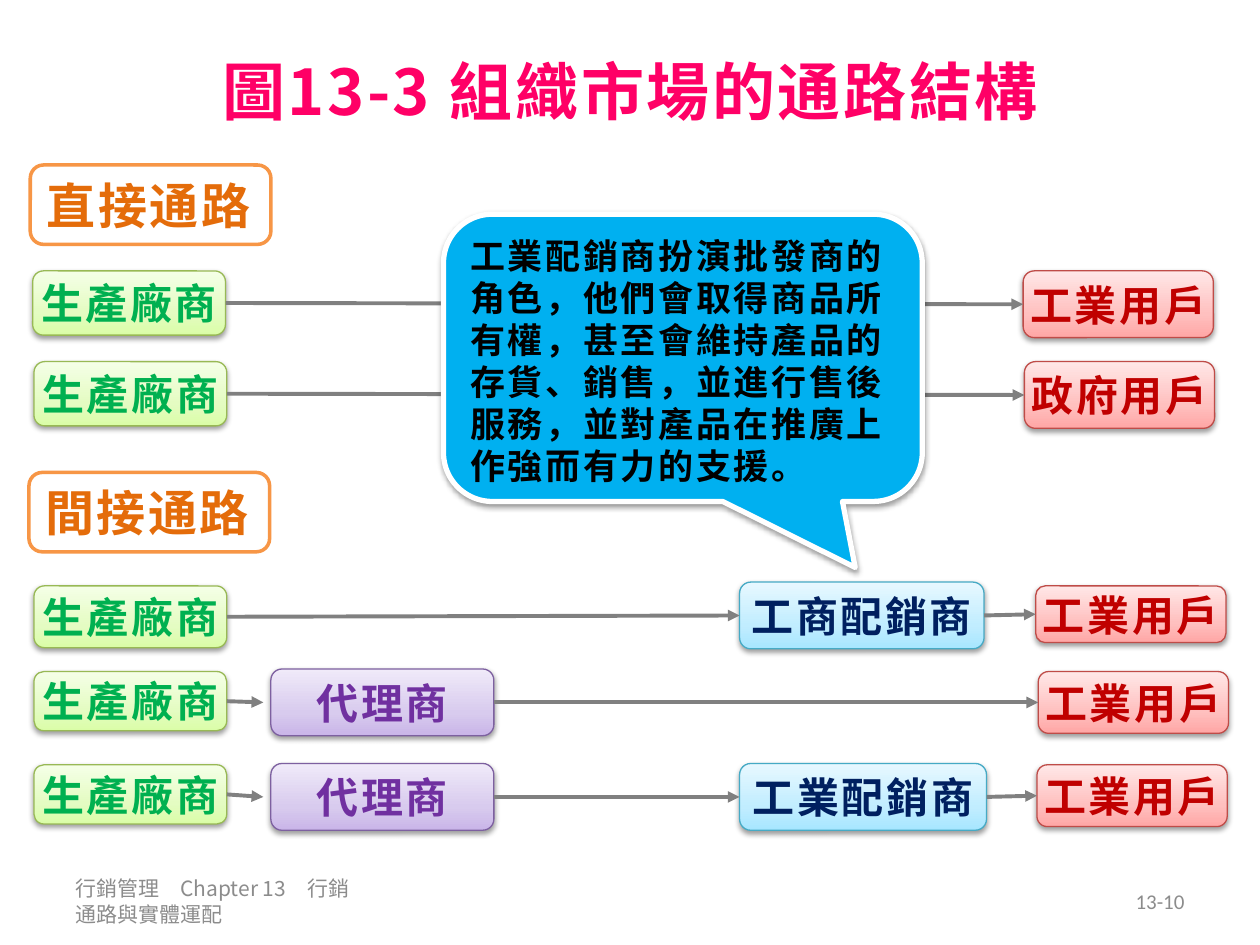
"""Build the slide on channel structures in organisational markets."""
from lxml import etree
from pptx import Presentation
from pptx import util as u
from pptx.dml.color import RGBColor
from pptx.enum import shapes, text
from pptx.oxml import parse_xml
from pptx.oxml.ns import nsdecls, qn

THEME = {
    "cjk": "Noto Sans CJK SC", "latin": "Calibri",
    "title": (36, "FF0066"), "heading": (28, "E46C0A"), "note": (20, "000000"),
    "footer": (12, "8C8C8C"), "node": 24, "arrow": "808080",
    "white": "FFFFFF", "heading_line": "F79646", "note_fill": "00B0F0",
    "maker": ("00B050", "98B955", ("DAFDA7", "E4FCC2", "F5FFE7")),
    "agent": ("7030A0", "7D60A0", ("C9B5E8", "D8CBEE", "F0EAF9")),
    "dealer": ("002060", "46AAC5", ("A7E6FF", "C1EDFF", "E7F8FF")),
    "user": ("C00000", "BF4C48", ("FFA6A5", "FFC0BF", "FFE7E7")),
}
SHADOW = (f'<a:effectLst {nsdecls("a")}><a:outerShdw blurRad="40000" dist="20000" '
          'dir="5400000" rotWithShape="0"><a:srgbClr val="000000">'
          '<a:alpha val="38000"/></a:srgbClr></a:outerShdw></a:effectLst>')

prs = Presentation()
prs.slide_width, prs.slide_height = u.Inches(10), u.Inches(7.5)
COL = prs.slide_width / 100
ROW = prs.slide_height / 75
s = prs.slides.add_slide(prs.slide_layouts[5])


def grid(left, top, width, height):
    return [round(v) for v in (left * COL, top * ROW, width * COL, height * ROW)]


def write(sp, words, size, color, align=text.PP_ALIGN.LEFT, bold=True,
          anchor=text.MSO_ANCHOR.MIDDLE, wrap=True, font=THEME["cjk"]):
    tf = sp.text_frame
    tf.word_wrap, tf.vertical_anchor = wrap, anchor
    tf.auto_size = text.MSO_AUTO_SIZE.NONE
    p = tf.paragraphs[0]
    p.alignment = align
    r = p.add_run()
    r.text = words
    r.font.name, r.font.size, r.font.bold = font, u.Pt(size), bold
    r.font.color.rgb = RGBColor.from_string(color)
    rPr = r.font._element
    etree.SubElement(rPr, qn("a:ea")).set("typeface", font)
    if bold:
        rPr.set("spc", "150")
    return p


title = s.shapes.title
title.left, title.top, title.width, title.height = grid(5, 1.3, 90, 11.8)
write(title, "圖13-3 組織市場的通路結構", *THEME["title"], text.PP_ALIGN.CENTER)

footers = [
    (5, 24.5, "行銷管理　Chapter 13　行銷通路與實體運配", text.PP_ALIGN.LEFT, THEME["cjk"]),
    (71.7, 23.3, "13-10", text.PP_ALIGN.RIGHT, THEME["latin"]),
]
for left, width, words, align, font in footers:
    sp = s.shapes.add_textbox(*grid(left, 69.5, width, 4))
    p = write(sp, words, *THEME["footer"], align, bold=False, font=font)
    p.line_spacing = u.Pt(14.5)

for left, top, words in [(2.4, 13.1, "直接通路"), (2.3, 37.5, "間接通路")]:
    sp = s.shapes.add_shape(shapes.MSO_SHAPE.ROUNDED_RECTANGLE, *grid(left, top, 19.1, 6.3))
    sp.shadow.inherit = False
    sp.fill.solid()
    sp.fill.fore_color.rgb = RGBColor.from_string(THEME["white"])
    sp.line.color.rgb = RGBColor.from_string(THEME["heading_line"])
    sp.line.width = u.Pt(2)
    write(sp, words, *THEME["heading"], wrap=False)

channels = [
    [("maker", "生產廠商", 2.6, 21.5, 15.3, 5.1), ("user", "工業用戶", 81.2, 21.5, 15.1, 5.3)],
    [("maker", "生產廠商", 2.7, 28.7, 15.3, 5.1), ("user", "政府用戶", 81.3, 28.7, 15.1, 5.3)],
    [("maker", "生產廠商", 2.7, 46.5, 15.3, 4.9), ("dealer", "工商配銷商", 58.7, 46.2, 19.4, 5.3),
     ("user", "工業用戶", 82.2, 46.5, 15.1, 4.5)],
    [("maker", "生產廠商", 2.7, 53.3, 15.3, 4.7), ("agent", "代理商", 21.5, 53.1, 17.7, 5.3),
     ("user", "工業用戶", 82.4, 53.3, 15.1, 4.9)],
    [("maker", "生產廠商", 2.7, 60.7, 15.3, 4.7), ("agent", "代理商", 21.5, 60.6, 17.7, 5.3),
     ("dealer", "工業配銷商", 58.7, 60.6, 19.6, 5.3), ("user", "工業用戶", 82.3, 60.7, 15.1, 4.9)],
]
for channel in channels:
    previous = None
    for role, words, *box in channel:
        ink, edge, shades = THEME[role]
        sp = s.shapes.add_shape(shapes.MSO_SHAPE.ROUNDED_RECTANGLE, *grid(*box))
        sp.line.color.rgb = RGBColor.from_string(edge)
        sp.line.width = u.Pt(0.75)
        stops = "".join(f'<a:gs pos="{pos}000"><a:srgbClr val="{shade}"/></a:gs>'
                        for pos, shade in zip((0, 35, 100), shades))
        spPr = sp._element.spPr
        spPr.find(qn("a:prstGeom")).addnext(parse_xml(
            f'<a:gradFill {nsdecls("a")} rotWithShape="1"><a:gsLst>{stops}</a:gsLst>'
            '<a:lin ang="16200000" scaled="0"/></a:gradFill>'))
        spPr.append(parse_xml(SHADOW))
        write(sp, words, THEME["node"], ink, text.PP_ALIGN.CENTER, wrap=False)
        if previous is not None:
            gap = round(0.6 * COL) if role == "agent" else 0
            cx = s.shapes.add_connector(
                shapes.MSO_CONNECTOR.STRAIGHT,
                previous.left + previous.width, previous.top + previous.height // 2,
                sp.left - gap, sp.top + sp.height // 2)
            cx.begin_connect(previous, 3)
            if not gap:
                cx.end_connect(sp, 1)
            cx.line.color.rgb = RGBColor.from_string(THEME["arrow"])
            cx.line.width = u.Pt(2.25)
            etree.SubElement(cx.line._get_or_add_ln(), qn("a:tailEnd")).set("type", "triangle")
            etree.SubElement(cx._element.spPr, qn("a:effectLst"))
        previous = sp

note = s.shapes.add_shape(shapes.MSO_SHAPE.ROUNDED_RECTANGULAR_CALLOUT, *grid(35.2, 17, 38, 22.8))
for i, share in enumerate((0.36, 0.73, 0.17)):
    note.adjustments[i] = share
note.fill.solid()
note.fill.fore_color.rgb = RGBColor.from_string(THEME["note_fill"])
note.line.color.rgb = RGBColor.from_string(THEME["white"])
note.line.width = u.Pt(3)
note._element.spPr.append(parse_xml(SHADOW))
p = write(note, "工業配銷商扮演批發商的角色，他們會取得商品所有權，甚至會維持產品的存貨、銷售，"
          "並進行售後服務，並對產品在推廣上作強而有力的支援。",
          *THEME["note"], anchor=text.MSO_ANCHOR.TOP)
p.line_spacing = u.Pt(24)

prs.save("out.pptx")
